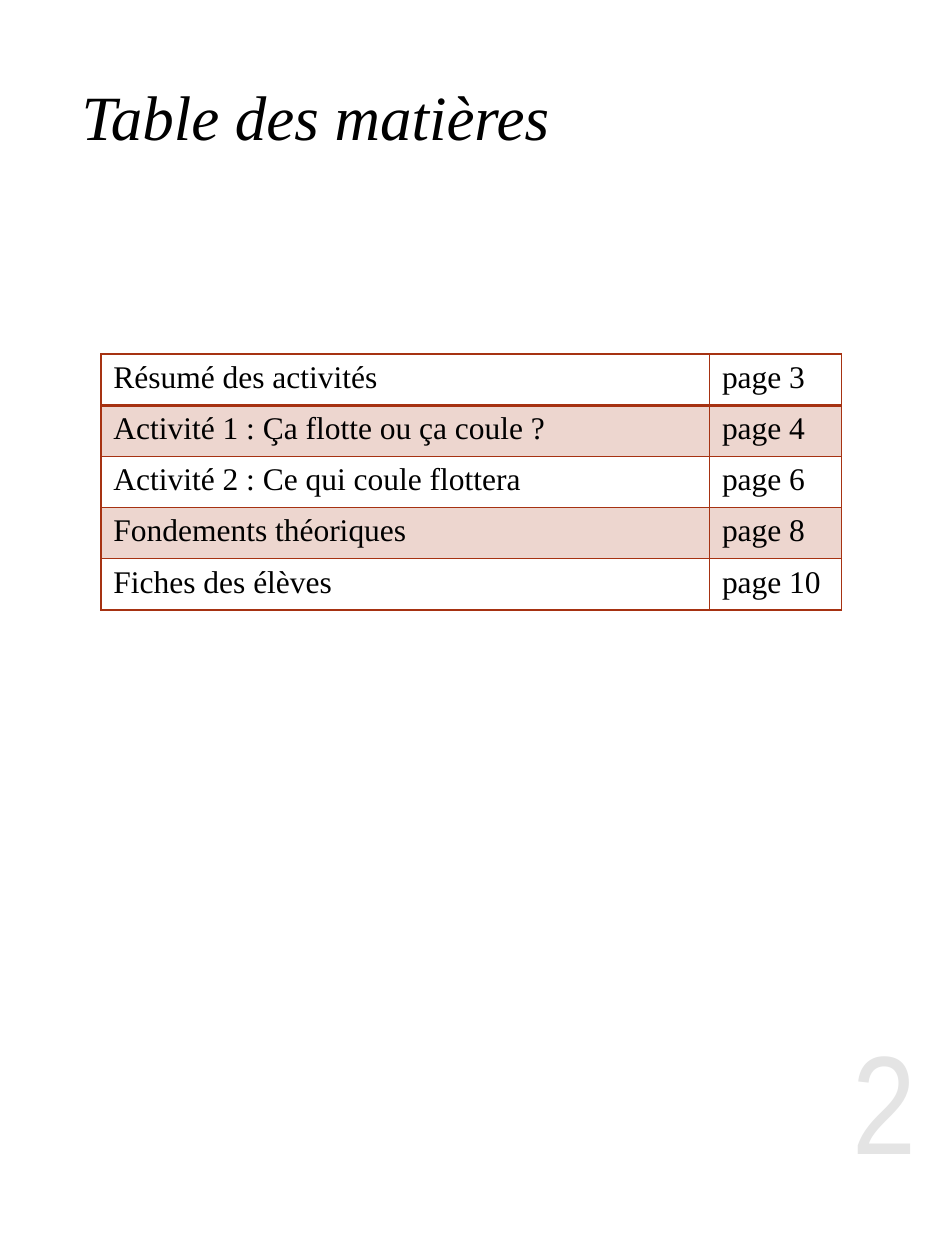
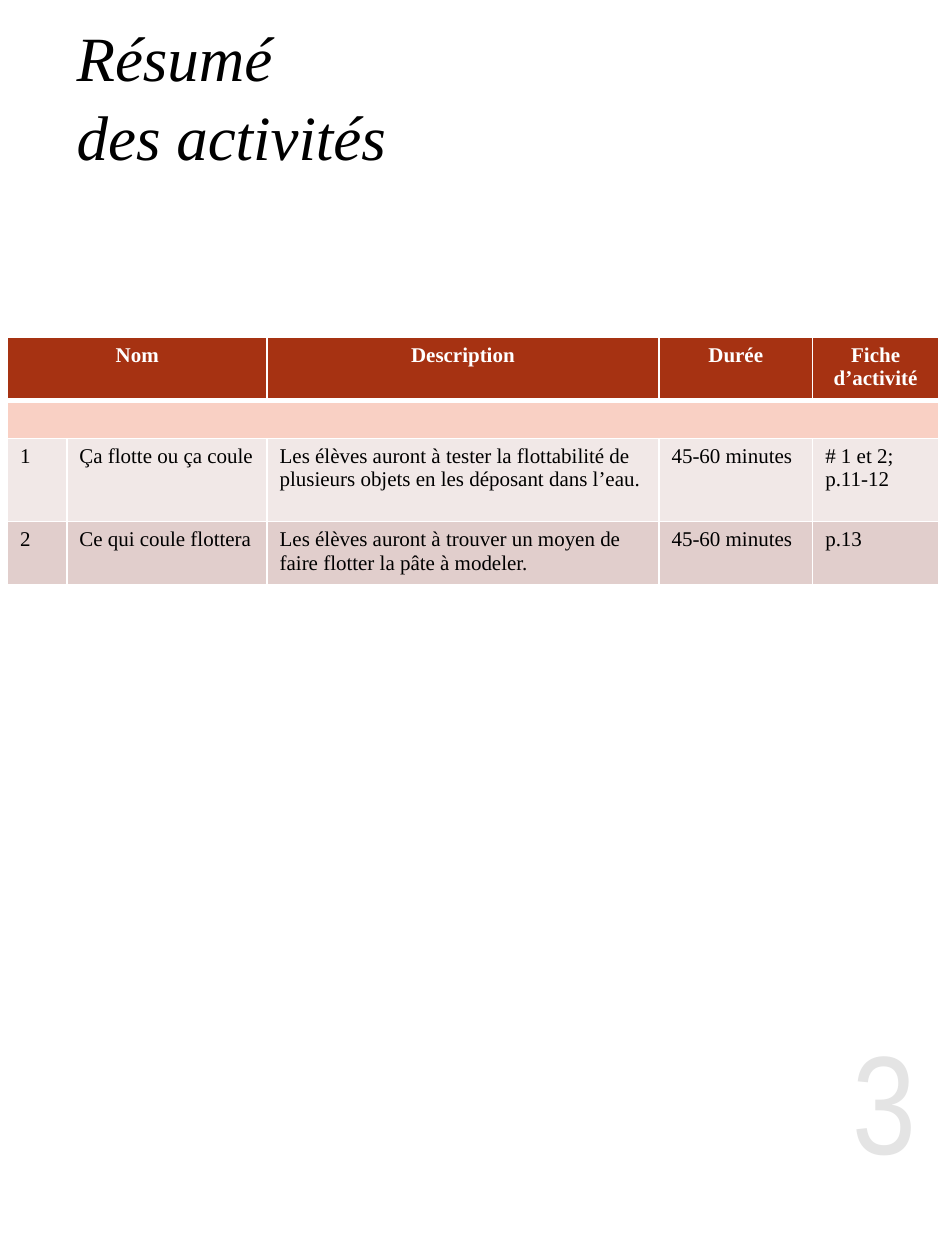
from dataclasses import dataclass

from lxml import etree
from pptx import Presentation
from pptx import util as u
from pptx.dml.color import RGBColor
from pptx.enum import text
from pptx.oxml import ns

WIDTH, HEIGHT = u.Inches(7.5), u.Inches(10)
SERIF, NARROW = "Times New Roman", "Arial Narrow"
BLACK, WHITE, RUST, PALE_GRAY = "000000", "FFFFFF", "A63212", "E4E4E4"
PEACH, ROSE_LIGHT, ROSE = "F9D0C4", "F1E8E7", "E1CECC"


@dataclass
class Box:
    """Place on the slide, in percent of its width and height."""
    left: float
    top: float
    width: float
    height: float


@dataclass
class Row:
    cells: list[str]
    height: float
    fill: str | None = None
    alpha: int = 100
    header: bool = False
    bottom_line: float = 1
    spans: tuple[tuple[int, int], ...] = ()


@dataclass
class Grid:
    left: float
    top: float
    columns: list[float]
    rows: list[Row]
    size: float
    line: str


def across(percent: float) -> int:
    return round(WIDTH * percent / 100)


def down(percent: float) -> int:
    return round(HEIGHT * percent / 100)


def color(value: str) -> RGBColor:
    return RGBColor.from_string(value)


def style(paragraph, size: float, hue: str, face: str = SERIF,
          bold: bool = False, italic: bool = False) -> None:
    for run in paragraph.runs:
        font = run.font
        font.name, font.size = face, u.Pt(size)
        font.bold, font.italic = bold, italic
        font.color.rgb = color(hue)


def add_words(slide, words: str, box: Box):
    frame = slide.shapes.add_textbox(across(box.left), down(box.top),
                                     across(box.width), down(box.height)).text_frame
    frame.word_wrap = True
    frame.text = words
    return frame


def add_title(slide, words: str, box: Box) -> None:
    frame = add_words(slide, words, box)
    frame.vertical_anchor = text.MSO_ANCHOR.MIDDLE
    frame.margin_top = u.Inches(0.12)
    frame.paragraphs[0].line_spacing = 1.04
    style(frame.paragraphs[0], 36, BLACK, italic=True)


def add_page_number(slide, number: int) -> None:
    frame = add_words(slide, str(number), Box(87.6, 80.5, 12, 11.3))
    frame.margin_left = frame.margin_right = 0
    frame.margin_top = frame.margin_bottom = 0
    frame.paragraphs[0].alignment = text.PP_ALIGN.CENTER
    style(frame.paragraphs[0], 80, PALE_GRAY, NARROW)


def add_borders(cell, hue: str, widths: dict[str, float]) -> None:
    properties = cell._tc.get_or_add_tcPr()
    for side, width in widths.items():
        line = etree.SubElement(properties, ns.qn(f"a:ln{side}"), w=str(u.Pt(width)))
        solid = etree.SubElement(line, ns.qn("a:solidFill"))
        etree.SubElement(solid, ns.qn("a:srgbClr"), val=hue)


def fill_cell(cell, hue: str | None, alpha: int) -> None:
    if hue is None:
        cell.fill.background()
        return
    cell.fill.solid()
    cell.fill.fore_color.rgb = color(hue)
    if alpha < 100:
        shade = cell._tc.tcPr.find(f".//{ns.qn('a:solidFill')}[last()]")
        shade = cell._tc.tcPr.find(ns.qn("a:solidFill"))[0]
        etree.SubElement(shade, ns.qn("a:alpha"), val=str(alpha * 1000))


def write_cell(cell, words: str, row: Row, size: float) -> None:
    cell.text = words
    paragraph = cell.text_frame.paragraphs[0]
    if not words:
        etree.SubElement(paragraph._p, ns.qn("a:endParaRPr"), sz=str(size * 100))
    if row.header:
        paragraph.alignment = text.PP_ALIGN.CENTER
    style(paragraph, size, WHITE if row.header else BLACK, bold=row.header)


def add_grid(slide, grid: Grid) -> None:
    table = slide.shapes.add_table(
        len(grid.rows), len(grid.columns), across(grid.left), down(grid.top),
        across(sum(grid.columns)), down(sum(row.height for row in grid.rows))).table
    table.first_row = table.horz_banding = False
    for column, width in zip(table.columns, grid.columns):
        column.width = across(width)
    above = 1.0
    for r, row in enumerate(grid.rows):
        table.rows[r].height = down(row.height)
        for c, words in enumerate(row.cells):
            cell = table.cell(r, c)
            add_borders(cell, grid.line,
                        {"L": 1, "R": 1, "T": above, "B": row.bottom_line})
            fill_cell(cell, row.fill, row.alpha)
            write_cell(cell, words, row, grid.size)
        for first, last in row.spans:
            table.cell(r, first).merge(table.cell(r, last))
        above = row.bottom_line


# Contents table: every second row is tinted
CONTENTS = [
    ("Résumé des activités", "page 3"),
    ("Activité 1 : Ça flotte ou ça coule ?", "page 4"),
    ("Activité 2 : Ce qui coule flottera", "page 6"),
    ("Fondements théoriques", "page 8"),
    ("Fiches des élèves", "page 10"),
]
CONTENTS_GRID = Grid(10.67, 28.1, [64.4, 14], [
    Row(list(entry), 4.06, RUST if i % 2 else None, 20,
        bottom_line=1 if i else 2)
    for i, entry in enumerate(CONTENTS)], 18, RUST)

# Summary of the activities
ACTIVITIES_GRID = Grid(0.8, 26.8, [6.27, 21.2, 41.47, 16.27, 13.33], [
    Row(["Nom", "", "Description", "Durée", "Fiche d’activité"], 4.7, RUST,
        header=True, bottom_line=3, spans=((0, 1),)),
    Row([""] * 5, 2.8, PEACH, spans=((0, 4),)),
    Row(["1", "Ça flotte ou ça coule",
         "Les élèves auront à tester la flottabilité de plusieurs objets "
         "en les déposant dans l’eau.",
         "45-60 minutes", "# 1 et 2; p.11-12"], 6.6, ROSE_LIGHT),
    Row(["2", "Ce qui coule flottera",
         "Les élèves auront à trouver un moyen de faire flotter la pâte à modeler.",
         "45-60 minutes", "p.13"], 4.7, ROSE),
], 12, WHITE)

PAGES = [
    ("Table des matières", Box(7.33, 3.9, 67.47, 9.5), CONTENTS_GRID),
    ("Résumé\vdes activités", Box(6.8, 2.4, 39.87, 9.5), ACTIVITIES_GRID),
]


def main() -> None:
    deck = Presentation()
    deck.slide_width, deck.slide_height = WIDTH, HEIGHT
    for number, (title, title_box, grid) in enumerate(PAGES, start=2):
        slide = deck.slides.add_slide(deck.slide_layouts[6])
        add_title(slide, title, title_box)
        add_grid(slide, grid)
        add_page_number(slide, number)
    deck.save("out.pptx")


if __name__ == "__main__":
    main()
